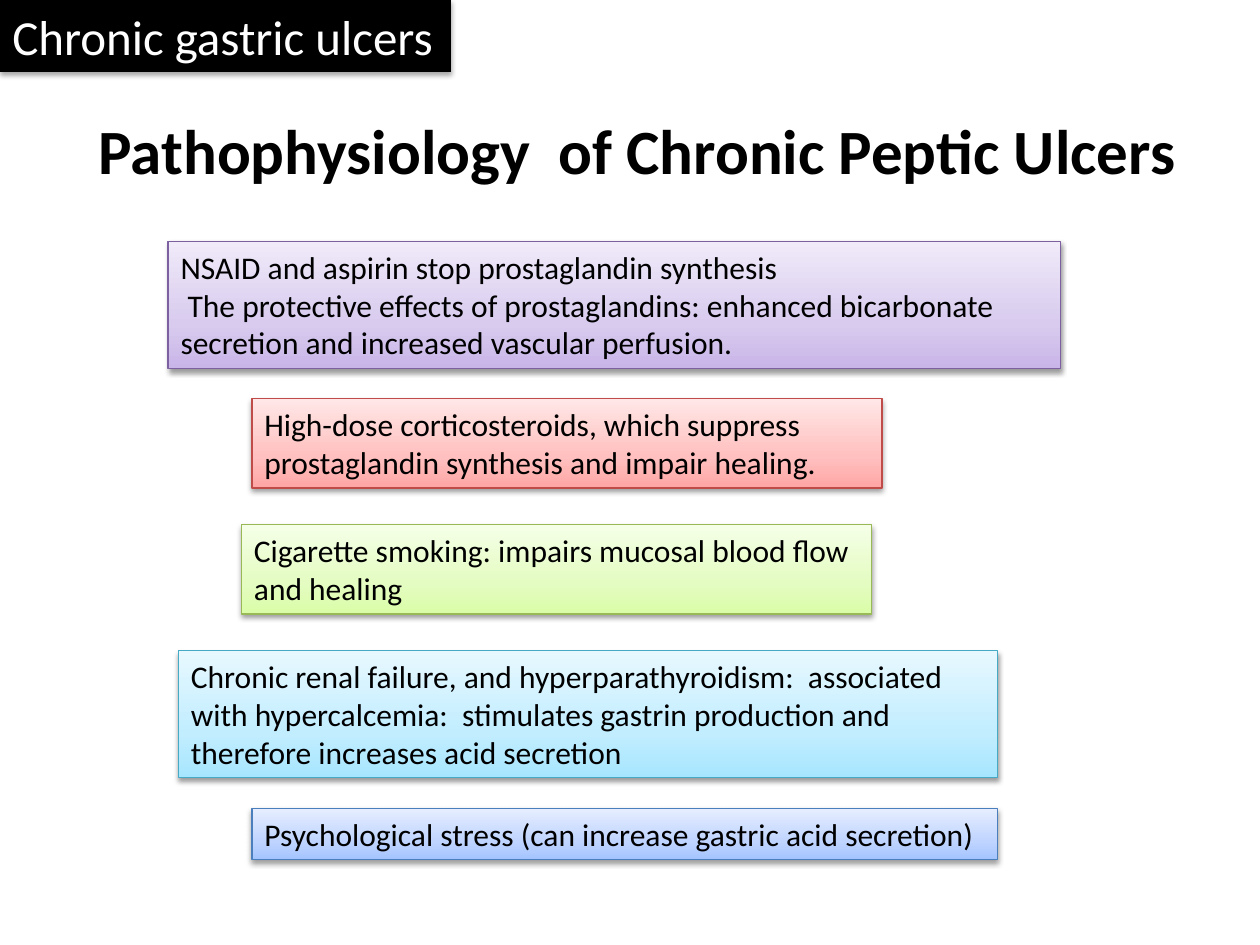
import pptx
import pptx.util
import pptx.dml.color
import pptx.enum.shapes
import pptx.enum.text
import pptx.oxml
import pptx.oxml.ns
from dataclasses import dataclass
from pptx.util import Cm

NS = pptx.oxml.ns.nsdecls("a")
ALIGN = pptx.enum.text.PP_ALIGN
ANCHOR = pptx.enum.text.MSO_ANCHOR


@dataclass
class Cause:
    left: float
    top: float
    width: float
    height: float
    shades: tuple[str, str, str]
    edge: str
    lines: list[str]


CAUSES = [
    Cause(3.39, 4.87, 17.99, 2.56, ("C9B5E8", "D8CBEE", "F0EAF9"), "7D60A0", [
        "NSAID and aspirin stop prostaglandin synthesis",
        " The protective effects of prostaglandins: enhanced bicarbonate "
        "secretion and increased vascular perfusion."]),
    Cause(5.08, 8.04, 12.7, 1.8, ("FFA6A5", "FFC0BF", "FFE7E7"), "BF4C48", [
        "High-dose corticosteroids, which suppress prostaglandin synthesis "
        "and impair healing."]),
    Cause(4.87, 10.58, 12.7, 1.8, ("DAFDA7", "E4FCC2", "F5FFE7"), "98B955", [
        "Cigarette smoking: impairs mucosal blood flow and healing"]),
    Cause(3.6, 13.12, 16.51, 2.56, ("A7E6FF", "C1EDFF", "E7F8FF"), "46AAC5", [
        "Chronic renal failure, and hyperparathyroidism:  associated with "
        "hypercalcemia:  stimulates gastrin production and therefore "
        "increases acid secretion"]),
    Cause(5.08, 16.3, 15.03, 1.03, ("A4C4FF", "BFD4FF", "E6EEFF"), "4B7EBC", [
        "Psychological stress (can increase gastric acid secretion)"]),
]


def color(code: str):
    return pptx.dml.color.RGBColor.from_string(code)


def write(shape, lines: list[str], size: int = 18, ink: str = "000000",
          bold: bool = False, wrap: bool = True, align=ALIGN.LEFT,
          anchor=ANCHOR.TOP) -> None:
    frame = shape.text_frame
    frame.word_wrap = wrap
    frame.vertical_anchor = anchor
    frame.auto_size = pptx.enum.text.MSO_AUTO_SIZE.NONE
    frame.text = "\n".join(lines)
    for para in frame.paragraphs:
        para.alignment = align
        for run in para.runs:
            run.font.name = "Calibri"
            run.font.size = pptx.util.Pt(size)
            run.font.bold = bold
            run.font.color.rgb = color(ink)


def shade(shape, shades: tuple[str, str, str]) -> None:
    shape.fill.gradient()
    grad = shape._element.spPr.find(pptx.oxml.ns.qn("a:gradFill"))
    stops = "".join(
        f'<a:gs pos="{pos}"><a:srgbClr val="{code}"/></a:gs>'
        for pos, code in zip((0, 35000, 100000), shades))
    fresh = pptx.oxml.parse_xml(
        f'<a:gradFill {NS} rotWithShape="1"><a:gsLst>{stops}</a:gsLst>'
        '<a:lin ang="16200000" scaled="1"/></a:gradFill>')
    grad.getparent().replace(grad, fresh)


def shadow(shape, gap: float, alpha: int) -> None:
    shape.shadow.inherit = False
    effects = shape._element.spPr.find(pptx.oxml.ns.qn("a:effectLst"))
    effects.append(pptx.oxml.parse_xml(
        f'<a:outerShdw {NS} blurRad="{pptx.util.Pt(3.1)}" '
        f'dist="{pptx.util.Pt(gap)}" dir="5400000" rotWithShape="0">'
        f'<a:srgbClr val="000000"><a:alpha val="{alpha * 1000}"/></a:srgbClr>'
        '</a:outerShdw>'))


def panel(slide, left: float, top: float, width: float, height: float):
    return slide.shapes.add_shape(
        pptx.enum.shapes.MSO_SHAPE.RECTANGLE,
        Cm(left), Cm(top), Cm(width), Cm(height))


def draw_cause(slide, cause: Cause) -> None:
    box = panel(slide, cause.left, cause.top, cause.width, cause.height)
    shade(box, cause.shades)
    box.line.color.rgb = color(cause.edge)
    box.line.width = pptx.util.Pt(0.75)
    shadow(box, 1.6, 38)
    write(box, cause.lines)


def draw_topic(slide, label: str) -> None:
    box = panel(slide, 0, 0, 9.09, 1.45)
    box.fill.solid()
    box.fill.fore_color.rgb = color("000000")
    box.line.fill.background()
    shadow(box, 1.8, 35)
    write(box, [label], size=28, ink="FFFFFF", wrap=False)


def main() -> None:
    deck = pptx.Presentation()
    deck.slide_width, deck.slide_height = Cm(25.4), Cm(19.05)
    slide = deck.slides.add_slide(deck.slide_layouts[5])
    title = slide.shapes.title
    title.left, title.top = Cm(1.47), Cm(2.11)
    title.width, title.height = Cm(22.76), Cm(1.8)
    write(title, ["Pathophysiology  of Chronic Peptic Ulcers"], size=36,
          bold=True, wrap=False, align=ALIGN.CENTER, anchor=ANCHOR.MIDDLE)
    for cause in CAUSES:
        draw_cause(slide, cause)
    draw_topic(slide, "Chronic gastric ulcers")
    deck.save("out.pptx")


if __name__ == "__main__":
    main()
